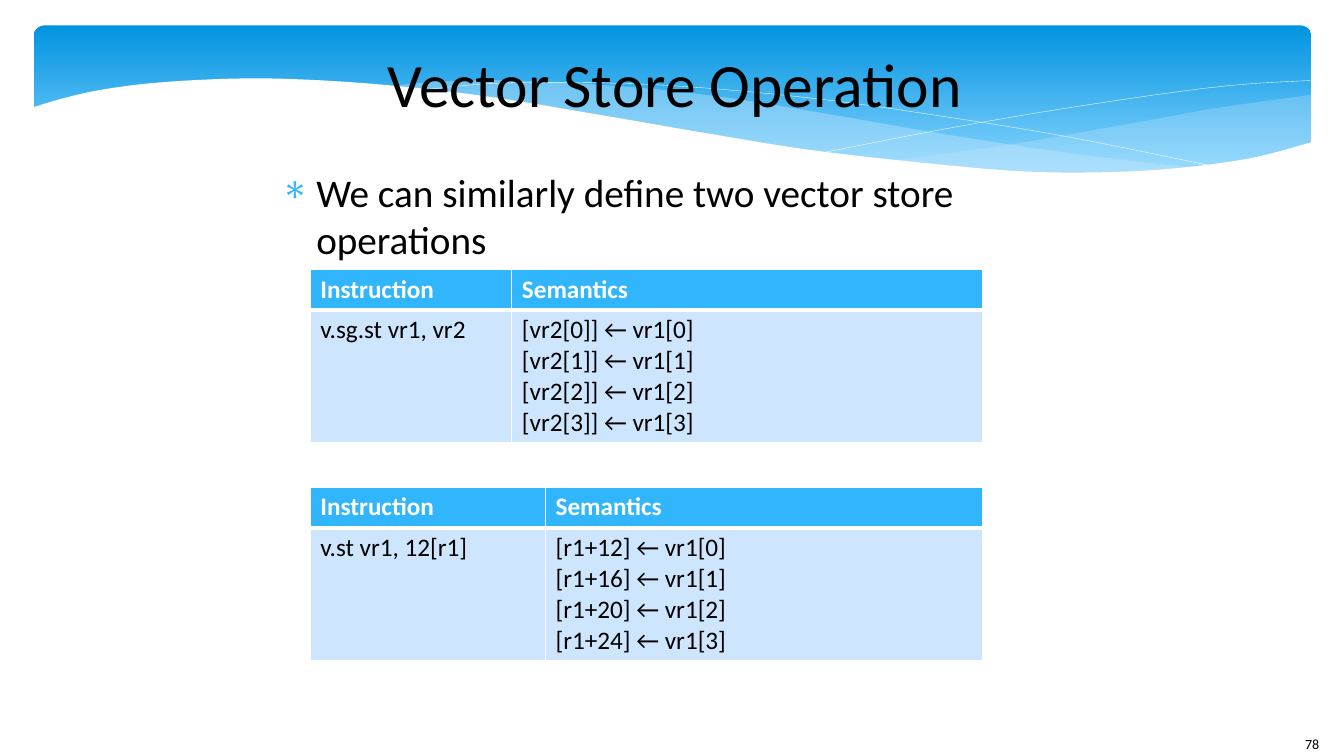
from dataclasses import dataclass
from typing import Any

from lxml import etree
from pptx import Presentation
from pptx import util as u
from pptx.dml.color import RGBColor
from pptx.enum import shapes, text
from pptx.oxml import ns

Point = tuple[float, float]


@dataclass(frozen=True)
class Theme:
    font: str = "Calibri"
    ink: str = "000000"
    white: str = "FFFFFF"
    accent: str = "31B6FD"
    cell: str = "CEE5FE"
    haze: str = "C6E7FC"
    band_top: str = "0293E0"
    band_bottom: str = "83D3FE"
    title_size: int = 44
    body_size: int = 28
    table_size: int = 18
    number_size: int = 10


@dataclass(frozen=True)
class Wave:
    """Smooth curves in cm; several curves, or corners, join into one outline."""
    curves: list[list[Point]]
    fill: str | None = None
    opacity: int = 100


@dataclass(frozen=True)
class InstructionTable:
    top: float
    first_column: float
    instruction: str
    semantics: list[str]


THEME = Theme()
TABLE_LEFT, TABLE_WIDTH = 7.82, 16.94
HEADER_HEIGHT, BODY_HEIGHT = 1.03, 3.31

WAVES = [
    Wave([[(33.04, 2.39), (30.68, 2.72), (29.13, 3), (25.53, 3.63), (22.4, 4.06)],
          [(22.4, 4.06), (24.79, 4.27), (27.2, 4.37), (29.24, 4.32), (30.94, 4.11),
           (33.04, 3.61)]], THEME.haze, 29),
    Wave([[(30.23, 4.24), (27.33, 3.91), (23.9, 3.4), (21.31, 2.95), (18.31, 2.46),
           (15.72, 2.18), (12.85, 2.03), (11.1, 2.06), (9.7, 2.18)],
          [(9.7, 2.18), (12.27, 2.46), (15.21, 2.95), (19.18, 3.63), (22.53, 4.09),
           (25.35, 4.32), (27.69, 4.39), (30.23, 4.24)]], THEME.haze, 40),
    Wave([[(10.46, 2.29), (12.29, 2.11), (14.66, 2.08), (17.27, 2.18), (20.6, 2.49),
           (23.55, 2.9), (26.92, 3.45), (30.73, 4.22)]]),
    Wave([[(20.78, 3.84), (23.55, 3.3), (26.29, 2.82), (29.34, 2.36), (31.29, 2.13),
           (33.02, 2.03)]]),
    Wave([[(33.07, 3.58), (31.5, 3.99), (29.64, 4.24), (27.86, 4.34), (25.78, 4.32),
           (23.32, 4.11), (20.42, 3.78), (17.93, 3.38), (15.14, 2.9), (12.34, 2.44),
           (9.91, 2.16), (7.77, 2.01), (5.97, 1.98), (4.01, 2.08), (2.57, 2.26),
           (1.55, 2.49), (0.79, 2.72)],
          [(0.79, 5.69), (33.07, 5.69)]], THEME.white),
]

TABLES = [
    InstructionTable(6.78, 5.08, "v.sg.st vr1, vr2",
                     [f"[vr2[{i}]] ← vr1[{i}]" for i in range(4)]),
    InstructionTable(12.27, 5.93, "v.st vr1, 12[r1]",
                     [f"[r1+{12 + 4 * i}] ← vr1[{i}]" for i in range(4)]),
]


def rgb(color: str) -> RGBColor:
    return RGBColor.from_string(color)


def place(shape: Any, left: float, top: float, width: float, height: float) -> None:
    shape.left, shape.top = u.Cm(left), u.Cm(top)
    shape.width, shape.height = u.Cm(width), u.Cm(height)


def write(paragraph: Any, words: str, size: int, color: str = THEME.ink,
          bold: bool = False) -> None:
    run = paragraph.add_run()
    run.text = words
    run.font.name, run.font.size, run.font.bold = THEME.font, u.Pt(size), bold
    run.font.color.rgb = rgb(color)


def smooth(knots: list[Point], steps: int = 6) -> list[Point]:
    """Catmull-Rom points through the knots; a two-point curve stays straight."""
    if len(knots) < 3:
        return knots
    padded = [knots[0], *knots, knots[-1]]
    points = [knots[0]]
    for a, b, c, d in zip(padded, padded[1:], padded[2:], padded[3:]):
        for step in range(1, steps + 1):
            t = step / steps
            x, y = (0.5 * (2 * q + (r - p) * t + (2 * p - 5 * q + 4 * r - s) * t ** 2
                           + (3 * q - p - 3 * r + s) * t ** 3)
                    for p, q, r, s in zip(a, b, c, d))
            points.append((x, y))
    return points


def draw_band(slide: Any) -> None:
    band = slide.shapes.add_shape(shapes.MSO_SHAPE.ROUNDED_RECTANGLE, u.Cm(0.85),
                                  u.Cm(0.64), u.Cm(32.2), u.Cm(3.96))
    band.adjustments[0] = 0.07
    band.shadow.inherit = False
    band.line.fill.background()
    band.fill.gradient()
    band.fill.gradient_angle = 270
    stops = zip(band.fill.gradient_stops, [(0, THEME.band_top), (0.9, THEME.band_bottom)])
    for stop, (position, color) in stops:
        stop.position, stop.color.rgb = position, rgb(color)


def draw_wave(slide: Any, wave: Wave) -> None:
    points = [(u.Cm(x), u.Cm(y)) for curve in wave.curves for x, y in smooth(curve)]
    builder = slide.shapes.build_freeform(*points[0])
    builder.add_line_segments(points[1:], close=wave.fill is not None)
    shape = builder.convert_to_shape()
    shape.shadow.inherit = False
    if wave.fill is None:
        shape.fill.background()
        shape.line.color.rgb = rgb(THEME.white)
        shape.line.width = u.Pt(0.25)
        return
    shape.line.fill.background()
    shape.fill.solid()
    shape.fill.fore_color.rgb = rgb(wave.fill)
    if wave.opacity < 100:
        color = shape.element.spPr.find(ns.qn("a:solidFill"))[0]
        etree.SubElement(color, ns.qn("a:alpha"), val=str(wave.opacity * 1000))


def prepare_placeholder(shape: Any, anchor: text.MSO_ANCHOR) -> Any:
    """Bring a placeholder to the front and return its first paragraph."""
    shape.element.getparent().append(shape.element)
    frame = shape.text_frame
    frame.margin_left = frame.margin_top = frame.margin_right = frame.margin_bottom = 0
    frame.vertical_anchor = anchor
    frame.auto_size = text.MSO_AUTO_SIZE.NONE
    frame.word_wrap = True
    return frame.paragraphs[0]


def set_bullet(paragraph: Any) -> None:
    properties = paragraph._p.get_or_add_pPr()
    properties.set("marL", str(u.Cm(1.19)))
    properties.set("indent", str(u.Cm(-0.89)))
    color = etree.SubElement(properties, ns.qn("a:buClr"))
    etree.SubElement(color, ns.qn("a:srgbClr"), val=THEME.accent)
    etree.SubElement(properties, ns.qn("a:buFont"), typeface="Symbol")
    etree.SubElement(properties, ns.qn("a:buChar"), char="∗")


def set_borders(cell: Any, top: int, bottom: int) -> None:
    properties = cell._tc.get_or_add_tcPr()
    for side, points in (("L", 1), ("R", 1), ("T", top), ("B", bottom)):
        line = etree.SubElement(properties, ns.qn(f"a:ln{side}"), w=str(u.Pt(points)))
        fill = etree.SubElement(line, ns.qn("a:solidFill"))
        etree.SubElement(fill, ns.qn("a:srgbClr"), val=THEME.white)


def draw_table(slide: Any, item: InstructionTable) -> None:
    table = slide.shapes.add_table(2, 2, u.Cm(TABLE_LEFT), u.Cm(item.top), u.Cm(TABLE_WIDTH),
                                   u.Cm(HEADER_HEIGHT + BODY_HEIGHT)).table
    for column, width in zip(table.columns, (item.first_column, TABLE_WIDTH - item.first_column)):
        column.width = u.Cm(width)
    rows = [[["Instruction"], ["Semantics"]], [[item.instruction], item.semantics]]
    for r, (row, height) in enumerate(zip(rows, (HEADER_HEIGHT, BODY_HEIGHT))):
        header = r == 0
        table.rows[r].height = u.Cm(height)
        for c, lines in enumerate(row):
            cell = table.cell(r, c)
            set_borders(cell, top=1 if header else 3, bottom=3 if header else 1)
            cell.fill.solid()
            cell.fill.fore_color.rgb = rgb(THEME.accent if header else THEME.cell)
            for i, line in enumerate(lines):
                frame = cell.text_frame
                paragraph = frame.add_paragraph() if i else frame.paragraphs[0]
                write(paragraph, line, THEME.table_size,
                      THEME.white if header else THEME.ink, header)


def main() -> None:
    presentation = Presentation()
    presentation.slide_width, presentation.slide_height = u.Cm(33.87), u.Cm(19.05)
    slide = presentation.slides.add_slide(presentation.slide_layouts[1])
    draw_band(slide)
    for wave in WAVES:
        draw_wave(slide, wave)

    number = slide.shapes.add_textbox(u.Cm(32.64), u.Cm(18.41), u.Cm(1.2), u.Cm(0.64))
    write(number.text_frame.paragraphs[0], "78", THEME.number_size)

    title, body = slide.shapes.title, slide.placeholders[1]
    place(title, 6.71, 0.79, 20.6, 2.59)
    heading = prepare_placeholder(title, text.MSO_ANCHOR.MIDDLE)
    heading.alignment = text.PP_ALIGN.CENTER
    write(heading, "Vector Store Operation", THEME.title_size)

    place(body, 6.78, 4.24, 20.75, 12.9)
    point = prepare_placeholder(body, text.MSO_ANCHOR.TOP)
    set_bullet(point)
    point.space_before = u.Pt(0)
    write(point, "We can similarly define two vector store operations", THEME.body_size)

    for table in TABLES:
        draw_table(slide, table)
    presentation.save("out.pptx")


if __name__ == "__main__":
    main()
